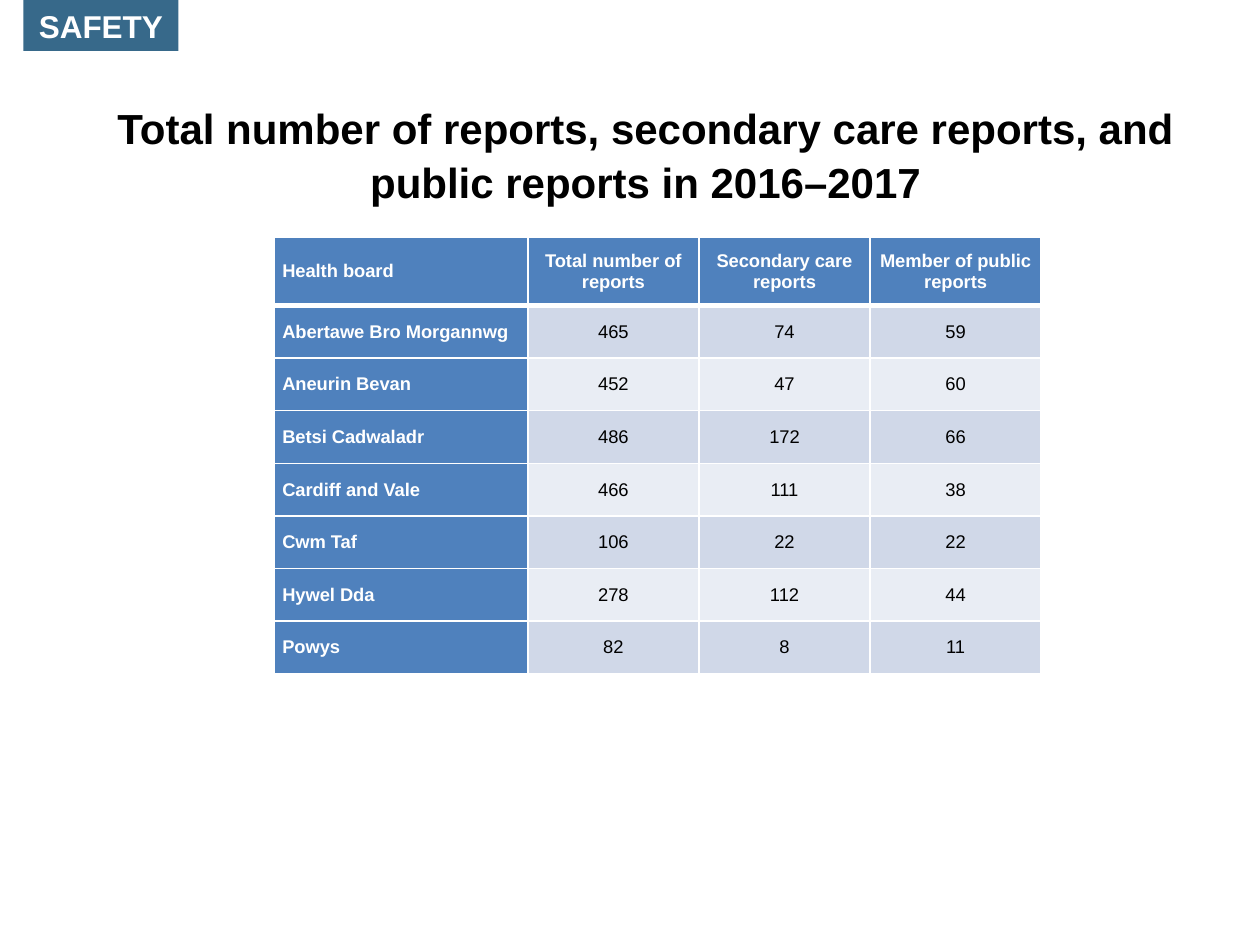
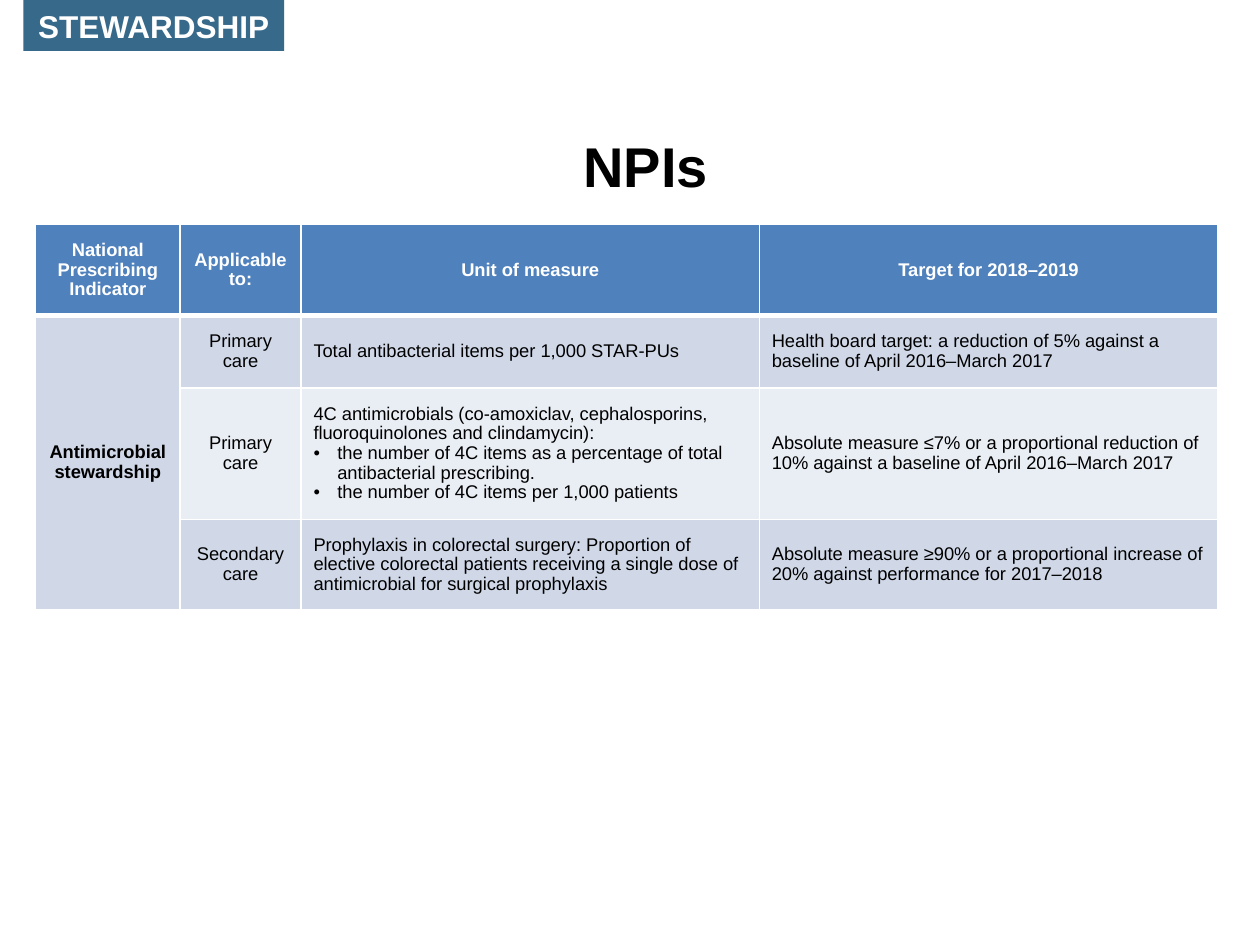
from dataclasses import dataclass

from lxml.etree import SubElement
from pptx import Presentation
from pptx.dml.color import RGBColor
from pptx.enum.shapes import MSO_SHAPE
from pptx.enum.text import MSO_ANCHOR, MSO_AUTO_SIZE, PP_ALIGN
from pptx.oxml import parse_xml
from pptx.oxml.ns import nsdecls, qn
from pptx.util import Cm, Pt


@dataclass(frozen=True)
class Theme:
    """Colours, font and type sizes shared by the slides."""
    font: str = "Arial"
    white: str = "FFFFFF"
    black: str = "000000"
    tag: str = "37698A"
    header: str = "4F81BD"
    bands: tuple = ("D0D8E8", "E9EDF4")
    tag_size: float = 18
    cell_size: float = 10.5
    title_spacing: float = 1.07


@dataclass(frozen=True)
class Box:
    """A region in centimetres."""
    left: float
    top: float
    width: float
    height: float

    def place(self, shape):
        """Move and size a shape to fill this region."""
        shape.left, shape.top = Cm(self.left), Cm(self.top)
        shape.width, shape.height = Cm(self.width), Cm(self.height)


@dataclass(frozen=True)
class TableStyle:
    """Cell insets, line spacing and alignment of one table."""
    inset_x: float
    inset_y: float
    line_spacing: float
    alignments: tuple
    header_alignments: tuple


THEME = Theme()
LEFT, CENTER = PP_ALIGN.LEFT, PP_ALIGN.CENTER

REPORTS_STYLE = TableStyle(0.17, 0.05, 1.0, (LEFT,) + (CENTER,) * 3, (LEFT,) + (CENTER,) * 3)
REPORTS_COLUMNS = (5.12, 3.45, 3.45, 3.45)
REPORTS_HEIGHTS = (1.37,) + (1.06,) * 7
REPORTS = (
    ("Health board", "Total number of reports", "Secondary care reports", "Member of public reports"),
    ("Abertawe Bro Morgannwg", "465", "74", "59"),
    ("Aneurin Bevan", "452", "47", "60"),
    ("Betsi Cadwaladr", "486", "172", "66"),
    ("Cardiff and Vale", "466", "111", "38"),
    ("Cwm Taf", "106", "22", "22"),
    ("Hywel Dda", "278", "112", "44"),
    ("Powys", "82", "8", "11"),
)

INDICATORS_STYLE = TableStyle(0.25, 0.3, 0.96, (CENTER, CENTER, LEFT, LEFT), (CENTER,) * 4)
INDICATORS_COLUMNS = (2.91, 2.44, 9.24, 9.24)
INDICATORS_HEIGHTS = (1.83, 1.46, 2.65, 1.83)
INDICATORS = (
    ("National Prescribing Indicator", "Applicable to:", "Unit of measure", "Target for 2018–2019"),
    ("Antimicrobial stewardship", "Primary care", "Total antibacterial items per 1,000 STAR-PUs",
     "Health board target: a reduction of 5% against a baseline of April 2016–March 2017"),
    (None, "Primary care",
     ("4C antimicrobials (co-amoxiclav, cephalosporins, fluoroquinolones and clindamycin):",
      "the number of 4C items as a percentage of total antibacterial prescribing.",
      "the number of 4C items per 1,000 patients"),
     "Absolute measure ≤7% or a proportional reduction of 10% against a baseline of "
     "April 2016–March 2017"),
    (None, "Secondary care",
     "Prophylaxis in colorectal surgery: Proportion of elective colorectal patients receiving "
     "a single dose of antimicrobial for surgical prophylaxis",
     "Absolute measure ≥90% or a proportional increase of 20% against performance for 2017–2018"),
)


def add_text(paragraph, text, size, color, bold, align):
    """Add one formatted run to a paragraph."""
    paragraph.alignment = align
    run = paragraph.add_run()
    run.text = text
    font = run.font
    font.name, font.size, font.bold = THEME.font, Pt(size), bold
    font.color.rgb = RGBColor.from_string(color)


def add_bullet(paragraph):
    """Give a paragraph a hanging round bullet."""
    properties = paragraph._p.get_or_add_pPr()
    indent = Cm(0.48)
    properties.set("marL", str(indent))
    properties.set("indent", str(-indent))
    SubElement(properties, qn("a:buFont"), typeface=THEME.font)
    SubElement(properties, qn("a:buChar"), char="•")


def set_borders(cell, bottom):
    """Draw white rules round a cell, with the given bottom weight."""
    weights = {"lnL": 1, "lnR": 1, "lnT": 1, "lnB": bottom}
    for position, (side, weight) in enumerate(weights.items()):
        cell._tc.get_or_add_tcPr().insert(position, parse_xml(
            f'<a:{side} {nsdecls("a")} w="{Pt(weight)}"><a:solidFill>'
            f'<a:srgbClr val="{THEME.white}"/></a:solidFill></a:{side}>'))


def fill_cell(cell, content, style, fill, color, bold, align, bottom):
    """Format a cell and write its lead text followed by any bullets."""
    cell.fill.solid()
    cell.fill.fore_color.rgb = RGBColor.from_string(fill)
    set_borders(cell, bottom)
    cell.vertical_anchor = MSO_ANCHOR.MIDDLE
    cell.margin_left = cell.margin_right = Cm(style.inset_x)
    cell.margin_top = cell.margin_bottom = Cm(style.inset_y)
    if content is None:
        return
    lines = (content,) if isinstance(content, str) else content
    for index, line in enumerate(lines):
        paragraph = cell.text_frame.add_paragraph() if index else cell.text_frame.paragraphs[0]
        if index:
            add_bullet(paragraph)
        paragraph.line_spacing = style.line_spacing
        add_text(paragraph, line, THEME.cell_size, color, bold, align)


def add_data_table(slide, left, top, columns, heights, rows, style, filled_labels):
    """Add a banded table whose first column holds the row labels."""
    table = slide.shapes.add_table(
        len(rows), len(columns), Cm(left), Cm(top), Cm(sum(columns)), Cm(sum(heights))).table
    for column, width in zip(table.columns, columns):
        column.width = Cm(width)
    for row, height in zip(table.rows, heights):
        row.height = Cm(height)
    for r, row in enumerate(rows):
        for c, content in enumerate(row):
            is_header, is_label = r == 0, c == 0
            accented = is_header or (is_label and filled_labels)
            fill_cell(
                table.cell(r, c), content, style,
                fill=THEME.header if accented else THEME.bands[(r - 1) % 2],
                color=THEME.white if accented else THEME.black,
                bold=is_header or is_label,
                align=(style.header_alignments if is_header else style.alignments)[c],
                bottom=3 if is_header else 1)
    return table


def add_tag(slide, text, box):
    """Add the section tag at the top edge."""
    tag = slide.shapes.add_shape(MSO_SHAPE.RECTANGLE, 0, 0, 0, 0)
    box.place(tag)
    tag.shadow.inherit = False
    tag.fill.solid()
    tag.fill.fore_color.rgb = RGBColor.from_string(THEME.tag)
    tag.line.fill.background()
    tag.text_frame.word_wrap = False
    tag.text_frame.vertical_anchor = MSO_ANCHOR.MIDDLE
    add_text(tag.text_frame.paragraphs[0], text, THEME.tag_size, THEME.white, True, CENTER)


def set_title(slide, text, size, box):
    """Move the title placeholder into its box and write the title."""
    title = slide.shapes.title
    box.place(title)
    frame = title.text_frame
    frame.auto_size = MSO_AUTO_SIZE.NONE
    frame.word_wrap = True
    frame.vertical_anchor = MSO_ANCHOR.TOP
    frame.paragraphs[0].line_spacing = THEME.title_spacing
    add_text(frame.paragraphs[0], text, size, THEME.black, True, CENTER)


def add_section_slide(deck, tag, tag_width, title, title_size, title_top):
    """Start a slide with its section tag and title."""
    slide = deck.slides.add_slide(deck.slide_layouts.get_by_name("Title Only"))
    set_title(slide, title, title_size, Box(1.9, title_top, 22.23, 2.11))
    add_tag(slide, tag, Box(0.47, 0, tag_width, 1.03))
    return slide


def add_safety_slide(deck):
    """Build the slide on reports by health board."""
    slide = add_section_slide(
        deck, "SAFETY", 3.13,
        "Total number of reports, secondary care reports, and public reports in 2016–2017", 24, 1.86)
    add_data_table(slide, 5.52, 4.79, REPORTS_COLUMNS, REPORTS_HEIGHTS, REPORTS,
                   REPORTS_STYLE, filled_labels=True)


def add_stewardship_slide(deck):
    """Build the slide on national prescribing indicators."""
    slide = add_section_slide(deck, "STEWARDSHIP", 5.26, "NPIs", 32, 2.42)
    table = add_data_table(slide, 0.72, 4.53, INDICATORS_COLUMNS, INDICATORS_HEIGHTS, INDICATORS,
                           INDICATORS_STYLE, filled_labels=False)
    indicator = table.cell(1, 0)
    indicator.merge(table.cell(3, 0))
    indicator.margin_left = indicator.margin_right = Cm(0.17)


def main():
    """Build and save the presentation."""
    deck = Presentation()
    deck.slide_width, deck.slide_height = Cm(25.4), Cm(19.05)
    add_safety_slide(deck)
    add_stewardship_slide(deck)
    deck.save("out.pptx")


if __name__ == "__main__":
    main()
